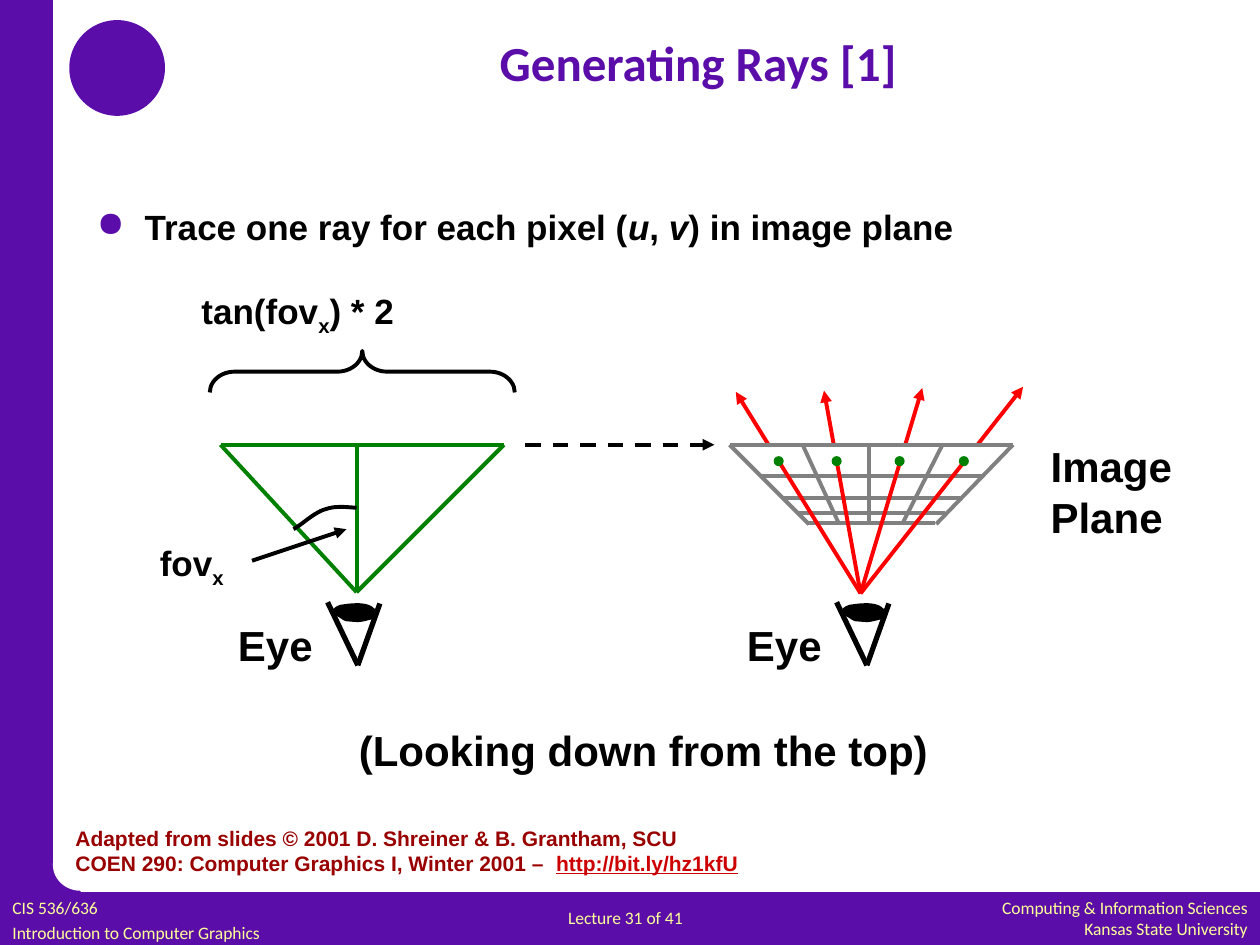
from dataclasses import dataclass

from lxml.etree import SubElement
from pptx import Presentation
from pptx.dml.color import RGBColor
from pptx.enum.dml import MSO_LINE
from pptx.enum.shapes import MSO_CONNECTOR, MSO_SHAPE
from pptx.enum.text import MSO_ANCHOR, PP_ALIGN
from pptx.oxml.ns import qn
from pptx.util import Inches, Pt


@dataclass(frozen=True)
class Theme:
    purple: str = "5B0DAA"
    cream: str = "FFFF99"
    white: str = "FFFFFF"
    black: str = "000000"
    gray: str = "808080"
    green: str = "008000"
    red: str = "FF0000"
    credit: str = "990000"
    link: str = "CC0000"
    head_font: str = "Calibri"
    body_font: str = "Arial"
    title: int = 28
    label: int = 24
    body: int = 20
    small: int = 12
    footer: int = 10
    thin: float = 2.25
    thick: float = 3


T = Theme()
LABEL = {"name": T.body_font, "size": T.label, "bold": True, "color": T.black}
BODY = LABEL | {"size": T.body}
CREDIT = LABEL | {"size": T.small, "color": T.credit}
FOOTER = {"name": T.head_font, "size": T.footer, "color": T.cream}
TITLE = {"name": T.head_font, "size": T.title, "bold": True, "color": T.purple}
SUB = {"baseline": "-25000"}


def bezier(start, *curves, steps=12):
    """Points along a chain of cubic curves."""
    points = [start]
    for c1, c2, end in curves:
        p0 = points[-1]
        for i in range(1, steps + 1):
            t = i / steps
            weights = ((1 - t) ** 3, 3 * t * (1 - t) ** 2, 3 * t * t * (1 - t), t ** 3)
            points.append(tuple(sum(w * q[k] for w, q in zip(weights, (p0, c1, c2, end)))
                                for k in (0, 1)))
    return points


class Builder:
    """Places elements on a grid of 100 columns by 75 rows."""

    def __init__(self, prs):
        self.s = prs.slides.add_slide(prs.slide_layouts[6])
        self.col = prs.slide_width / 100
        self.row = prs.slide_height / 75

    def xy(self, *values):
        return [round(v * (self.row if i % 2 else self.col)) for i, v in enumerate(values)]

    def paint(self, sp, fill, line, width):
        sp.shadow.inherit = False
        if fill:
            sp.fill.solid()
            sp.fill.fore_color.rgb = RGBColor.from_string(fill)
        else:
            sp.fill.background()
        if line:
            sp.line.color.rgb = RGBColor.from_string(line)
            sp.line.width = Pt(width)
        else:
            sp.line.fill.background()
        return sp

    def shape(self, kind, box, fill=None, line=None, width=T.thin):
        return self.paint(self.s.shapes.add_shape(kind, *self.xy(*box)), fill, line, width)

    def free(self, points, fill=None, line=None, width=T.thin):
        start, *rest = [self.xy(*p) for p in points]
        fb = self.s.shapes.build_freeform(*start)
        fb.add_line_segments(rest, close=bool(fill))
        return self.paint(fb.convert_to_shape(), fill, line, width)

    def line(self, start, end, color, width=T.thin, arrow=False, dash=False):
        cx = self.s.shapes.add_connector(MSO_CONNECTOR.STRAIGHT, *self.xy(*start, *end))
        cx.line.color.rgb = RGBColor.from_string(color)
        cx.line.width = Pt(width)
        if dash:
            cx.line.dash_style = MSO_LINE.DASH
        if arrow:
            SubElement(cx.line._get_or_add_ln(), qn("a:tailEnd"), type="triangle")
        SubElement(cx._element.spPr, qn("a:effectLst"))

    def text(self, box, paragraphs, style, align=PP_ALIGN.LEFT, wrap=False,
             anchor=MSO_ANCHOR.TOP, gap=0, bullet=None):
        tf = self.s.shapes.add_textbox(*self.xy(*box)).text_frame
        tf.word_wrap = wrap
        tf.vertical_anchor = anchor
        for i, runs in enumerate(paragraphs):
            p = tf.add_paragraph() if i else tf.paragraphs[0]
            p.alignment = align
            if i and gap:
                p.space_before = Pt(gap)
            if bullet:
                self.bullet(p, bullet)
            for run in [runs] if isinstance(runs, str) else runs:
                words, extra = (run, {}) if isinstance(run, str) else run
                r = p.add_run()
                r.text = words
                self.format(r, style | extra)

    def format(self, r, values):
        for key, value in values.items():
            if key == "color":
                r.font.color.rgb = RGBColor.from_string(value)
            elif key == "baseline":
                r._r.get_or_add_rPr().set(key, value)
            else:
                setattr(r.font, key, Pt(value) if key == "size" else value)

    def bullet(self, p, color):
        pPr = p._p.get_or_add_pPr()
        indent = Inches(0.38)
        pPr.set("marL", str(indent))
        pPr.set("indent", str(-indent))
        SubElement(SubElement(pPr, qn("a:buClr")), qn("a:srgbClr"), val=color)
        SubElement(pPr, qn("a:buChar"), char="●")

    def eye(self, tip):
        """Eye symbol whose sides meet at column tip."""
        for dx, y in ((-2.4, 47.8), (1.75, 47.9)):
            self.line((tip, 52.8), (tip + dx, y), T.black, T.thick)
        pupil = bezier((-1.9, 48.7), ((-1.8, 48.4), (-1.6, 48.3), (-1.3, 48.2)),
                       ((-1.1, 48.2), (0.7, 47.8), (1.2, 48.5)),
                       ((1.4, 48.5), (1.5, 48.6), (1.4, 48.8)),
                       ((1.1, 49), (1.3, 48.9), (0.9, 49)),
                       ((0.1, 49.2), (0.2, 49.2), (-0.9, 49.1)),
                       ((-1.2, 49), (-1.5, 48.6), (-1.9, 48.7)))
        self.free([(tip + x, y) for x, y in pupil], T.black, T.black, T.thick)
        self.text((tip - 10.5, 48.7, 8, 5), ["Eye"], LABEL)


def main():
    prs = Presentation()
    prs.slide_width, prs.slide_height = Inches(10), Inches(7.5)
    b = Builder(prs)

    # Frame with a rounded inner corner, and a plain emblem
    for box in ((0, 70.8, 100, 4.2), (0, 0, 4.2, 75), (2, 68.5, 4.4, 4.4)):
        b.shape(MSO_SHAPE.RECTANGLE, box, T.purple)
    b.shape(MSO_SHAPE.OVAL, (4.2, 66.6, 4.4, 4.1), T.white)
    b.shape(MSO_SHAPE.OVAL, (5.5, 1.6, 7.6, 7.6), T.purple)

    # Footer
    b.text((71.8, 70.7, 28.2, 4.3),
           ["Computing & Information Sciences", "Kansas State University"],
           FOOTER, PP_ALIGN.RIGHT)
    b.text((0, 70.7, 29.5, 4.4), ["CIS 536/636", "Introduction to Computer Graphics"],
           FOOTER, gap=2)
    b.text((44.1, 71.5, 15.2, 2.7), ["Lecture 31 of 41"], FOOTER)

    # Title and statement
    b.text((12.5, 0.8, 85.8, 8.3), ["Generating Rays [1]"], TITLE, PP_ALIGN.CENTER,
           wrap=True, anchor=MSO_ANCHOR.MIDDLE)
    italic = {"italic": True}
    b.text((6.7, 15.8, 85, 5),
           [["Trace one ray for each pixel (", ("u", italic), ", ", ("v", italic),
             ") in image plane"]], BODY, wrap=True, bullet=T.purple)

    # Right view: lower rows of the image plane, its sides slope one to one
    top, left, right = 35.3, 57.9, 80.4
    for depth in (6.2, 5.4, 4.2, 2.5):
        b.line((left + depth, top + depth), (right - depth, top + depth), T.gray)
    b.eye(68.8)

    # Rays, then the top cells that hide them
    for x, y in ((81.2, 30.7), (73.2, 30.8), (58.4, 31.1), (65.4, 31)):
        b.line((68.3, 47.1), (x, y), T.red, arrow=True)
    upper, lower = (58.1, 63.7, 69.1, 74.7, 80.4), (59.1, 64.2, 69.1, 74.2, 79.4)
    for i in range(4):
        b.free([(upper[i], 35.3), (upper[i + 1], 35.3),
                (lower[i + 1], 36.6), (lower[i], 36.6)], T.white)

    # Columns and front edge of the image plane, pixel dots
    for x, foot in zip((left, 63.7, 69, 74.8, right), (64.2, 66.6, 69, 71.6, 74.3)):
        b.line((x, top), (foot, 41.6), T.gray)
    b.line((left, top), (right, top), T.gray)
    for x in (61.4, 66, 71, 76.1):
        b.shape(MSO_SHAPE.OVAL, (x, 36.2, 0.8, 0.8), T.green)
    b.text((82.4, 34.5, 11.7, 9.1), ["Image", "Plane"], LABEL)

    # Left view: field of view triangle and its angle
    b.eye(28.4)
    corners, apex = ((17.5, top), (40, top)), (28.3, 47)
    b.line(*corners, T.green)
    for point in (*corners, (28.3, top)):
        b.line(point, apex, T.green)
    b.free(bezier((28.3, 40.3), ((27.9, 40.3), (26.7, 40.1), (25.9, 40.4)),
                  ((25, 40.6), (23.9, 41.7), (23.3, 42))), line=T.black)
    b.text((11.7, 42.5, 7.3, 4.4), [["fov", ("x", SUB)]], BODY)
    b.line((20, 44.5), (27.5, 42), T.black, arrow=True)

    # Width brace, link between the views, caption
    brace = b.shape(MSO_SHAPE.LEFT_BRACE, (27.1, 17.4, 3.3, 24.2), line=T.black)
    brace.adjustments[0] = 0.6
    brace.rotation = 90
    b.text((15, 22.5, 17.5, 4.4), [["tan(fov", ("x", SUB), ") * 2"]], BODY)
    b.line((41.7, top), (56.7, top), T.black, arrow=True, dash=True)
    b.text((27.5, 57, 47.6, 5), ["(Looking down from the top)"], LABEL)

    # Credit
    b.text((5, 65, 55.1, 5),
           ["Adapted from slides © 2001 D. Shreiner & B. Grantham, SCU",
            ["COEN 290: Computer Graphics I, Winter 2001 –  ",
             ("http://bit.ly/hz1kfU", {"color": T.link, "underline": True})]], CREDIT)

    prs.save("out.pptx")


if __name__ == "__main__":
    main()
